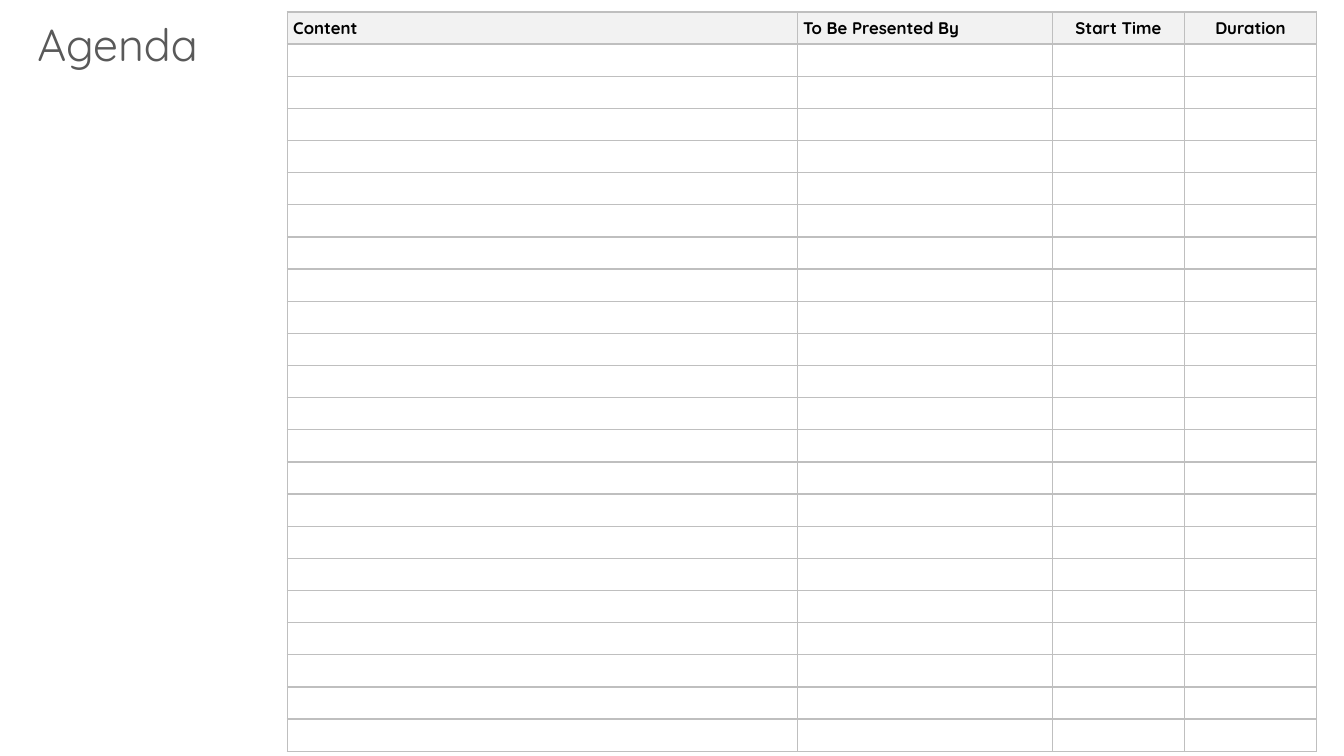
from lxml.etree import SubElement
from pptx import Presentation
from pptx.dml.color import RGBColor
from pptx.enum.text import MSO_ANCHOR, MSO_AUTO_SIZE, PP_ALIGN
from pptx.oxml.ns import qn
from pptx.util import Cm, Pt

FONT = "Quicksand"
ROW_COUNT = 23
ROW_HEIGHT = 0.81
# heading, width in cm, left margin in cm, alignment
COLUMNS = [
    ("Content", 12.85, 0.15, PP_ALIGN.LEFT),
    ("To Be Presented By", 6.43, 0.15, PP_ALIGN.LEFT),
    ("Start Time", 3.33, 0.02, PP_ALIGN.CENTER),
    ("Duration", 3.33, 0.02, PP_ALIGN.CENTER),
]


def style_run(span, size, color, bold=False):
    span.font.name = FONT
    span.font.size = Pt(size)
    span.font.bold = bold
    span.font.color.rgb = RGBColor.from_string(color)


def add_borders(cell, color):
    properties = cell._tc.get_or_add_tcPr()
    for side in ("lnL", "lnR", "lnT", "lnB"):
        line = SubElement(properties, qn(f"a:{side}"), w=str(Pt(1)))
        fill = SubElement(line, qn("a:solidFill"))
        SubElement(fill, qn("a:srgbClr"), val=color)


deck = Presentation()
deck.slide_width = Cm(33.87)
deck.slide_height = Cm(19.05)
page = deck.slides.add_slide(deck.slide_layouts[6])

# Agenda table: a heading row above empty rows to fill in
table_width = sum(width for _, width, _, _ in COLUMNS)
agenda = page.shapes.add_table(
    ROW_COUNT, len(COLUMNS), Cm(7.24), Cm(0.3), Cm(table_width), Cm(ROW_COUNT * ROW_HEIGHT)
).table
agenda.horz_banding = False
for row in agenda.rows:
    row.height = Cm(ROW_HEIGHT)

for column_index, (heading, width, margin_left, alignment) in enumerate(COLUMNS):
    agenda.columns[column_index].width = Cm(width)
    for row_index in range(ROW_COUNT):
        is_heading = row_index == 0
        cell = agenda.cell(row_index, column_index)
        add_borders(cell, "BFBFBF")
        cell.fill.solid()
        cell.fill.fore_color.rgb = RGBColor.from_string("F2F2F2" if is_heading else "FFFFFF")
        cell.vertical_anchor = MSO_ANCHOR.MIDDLE
        cell.margin_left = Cm(margin_left)
        cell.margin_top = cell.margin_right = Cm(0.02)
        cell.margin_bottom = 0
        para = cell.text_frame.paragraphs[0]
        para.alignment = alignment
        if is_heading:
            para.text = heading
            style_run(para.runs[0], 12, "000000", bold=True)
        else:
            # Empty cells need a small text size to keep the row height
            SubElement(para._p, qn("a:endParaRPr"), sz="1200")

# Title
title = page.shapes.add_textbox(Cm(0.69), Cm(0.3), Cm(7.04), Cm(1.63))
title.text_frame.word_wrap = True
title.text_frame.auto_size = MSO_AUTO_SIZE.SHAPE_TO_FIT_TEXT
title.text_frame.text = "Agenda"
style_run(title.text_frame.paragraphs[0].runs[0], 32, "595959")

deck.save("out.pptx")
